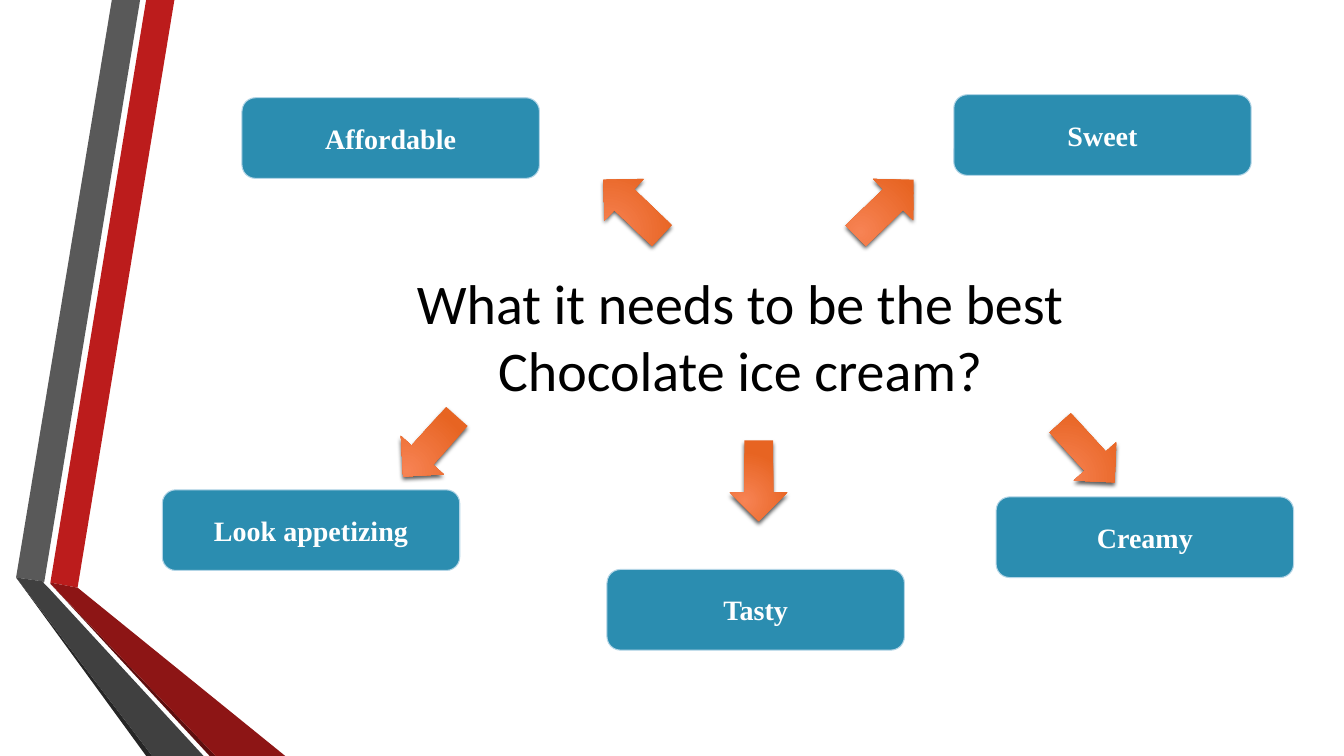
from dataclasses import dataclass

from lxml.etree import SubElement
from pptx import Presentation
from pptx.dml.color import RGBColor
from pptx.enum.shapes import MSO_SHAPE
from pptx.enum.text import MSO_ANCHOR, PP_ALIGN
from pptx.oxml.ns import qn
from pptx.util import Inches, Pt


@dataclass(frozen=True)
class Theme:
    title_font: str = "Calibri"
    box_font: str = "Times New Roman"
    title_size: int = 40
    box_size: int = 20
    title_color: str = "000000"
    box_text: str = "FFFFFF"
    box_fill: str = "2B8DB0"
    box_line: str = "B3D5E6"
    arrow_light: str = "F78354"
    arrow_dark: str = "E76422"
    shadow: str = "000000"
    red: str = "BC1C1C"
    red_dark: str = "8D1515"
    red_edge: str = "5E0E0E"
    gray: str = "595959"
    gray_dark: str = "404040"
    gray_edge: str = "262626"


class SlideBuilder:
    def __init__(self, s, theme):
        self.s = s
        self.theme = theme

    def ribbons(self, outlines):
        group = self.s.shapes.add_group_shape()
        for color, points in outlines:
            pts = [(Inches(x), Inches(y)) for x, y in points]
            fb = group.shapes.build_freeform(*pts[0])
            fb.add_line_segments(pts[1:], close=True)
            sp = fb.convert_to_shape()
            sp.shadow.inherit = False
            sp.fill.solid()
            sp.fill.fore_color.rgb = RGBColor.from_string(color)
            sp.line.fill.background()

    def set_text(self, sp, text, font, size, color, bold=False):
        tf = sp.text_frame
        tf.word_wrap = True
        tf.vertical_anchor = MSO_ANCHOR.MIDDLE
        p = tf.paragraphs[0]
        p.text = text
        p.alignment = PP_ALIGN.CENTER
        p.font.name = font
        p.font.size = Pt(size)
        p.font.bold = bold
        p.font.color.rgb = RGBColor.from_string(color)

    def title(self, text, x, y, w, h):
        t = self.theme
        sp = self.s.shapes.add_textbox(Inches(x), Inches(y), Inches(w), Inches(h))
        self.set_text(sp, text, t.title_font, t.title_size, t.title_color)

    def box(self, text, x, y, w=2.95, h=0.8):
        t = self.theme
        sp = self.s.shapes.add_shape(MSO_SHAPE.ROUNDED_RECTANGLE,
                                     Inches(x), Inches(y), Inches(w), Inches(h))
        sp.shadow.inherit = False
        sp.fill.solid()
        sp.fill.fore_color.rgb = RGBColor.from_string(t.box_fill)
        sp.line.color.rgb = RGBColor.from_string(t.box_line)
        sp.line.width = Pt(0.75)
        self.set_text(sp, text, t.box_font, t.box_size, t.box_text, bold=True)

    def arrow(self, x, y, rotation, w=0.57, h=0.8):
        t = self.theme
        sp = self.s.shapes.add_shape(MSO_SHAPE.DOWN_ARROW,
                                     Inches(x), Inches(y), Inches(w), Inches(h))
        sp.rotation = rotation
        sp.line.fill.background()
        sp.fill.gradient()
        for stop, color, position in zip(sp.fill.gradient_stops,
                                         (t.arrow_light, t.arrow_dark), (0, 1)):
            stop.color.rgb = RGBColor.from_string(color)
            stop.position = position
        spPr = sp.element.spPr
        grad = spPr.find(qn("a:gradFill"))
        grad.remove(grad.find(qn("a:lin")))
        circle = SubElement(grad, qn("a:path"), {"path": "circle"})
        SubElement(circle, qn("a:fillToRect"),
                   {"l": "50000", "t": "100000", "r": "100000", "b": "50000"})
        sp.shadow.inherit = False
        outer = SubElement(spPr.find(qn("a:effectLst")), qn("a:outerShdw"),
                           {"blurRad": str(Pt(3)), "dist": str(Pt(2)),
                            "dir": "5400000", "rotWithShape": "0"})
        clr = SubElement(outer, qn("a:srgbClr"), {"val": t.shadow})
        SubElement(clr, qn("a:alpha"), {"val": "64000"})


def main():
    prs = Presentation()
    prs.slide_width, prs.slide_height = Inches(13.33), Inches(7.5)
    theme = Theme()
    b = SlideBuilder(prs.slides.add_slide(prs.slide_layouts[6]), theme)

    b.ribbons([
        (theme.red, [(0.5, 5.78), (0.77, 5.83), (1.73, 0), (1.45, 0)]),
        (theme.gray, [(1.39, 0), (1.11, 0), (0.16, 5.73), (0.44, 5.77)]),
        (theme.gray_edge, [(0.16, 5.73), (1.45, 7.5), (1.51, 7.5)]),
        (theme.red_edge, [(0.5, 5.79), (2.08, 7.5), (2.14, 7.5)]),
        (theme.red_dark, [(0.5, 5.79), (2.14, 7.5), (2.83, 7.5),
                          (0.77, 5.83), (0.5, 5.78)]),
        (theme.gray_dark, [(2.02, 7.5), (0.48, 5.83), (0.43, 5.78),
                           (0.44, 5.77), (0.16, 5.73), (1.51, 7.5)]),
    ])

    b.title("What it needs to be the best Chocolate ice cream?",
            3.32, 2.37, 8.04, 1.92)

    for text, x, y in [("Affordable", 2.4, 0.97), ("Sweet", 9.46, 0.94),
                       ("Creamy", 9.88, 4.93), ("Tasty", 6.02, 5.65),
                       ("Look appetizing", 1.61, 4.86)]:
        b.box(text, x, y)

    for x, y, rotation in [(5.99, 1.66, 133.6), (8.49, 1.66, 225.9),
                           (10.5, 4.09, 317.7), (7.24, 4.37, 0),
                           (3.98, 4.03, 41.8)]:
        b.arrow(x, y, rotation)

    prs.save("out.pptx")


if __name__ == "__main__":
    main()
